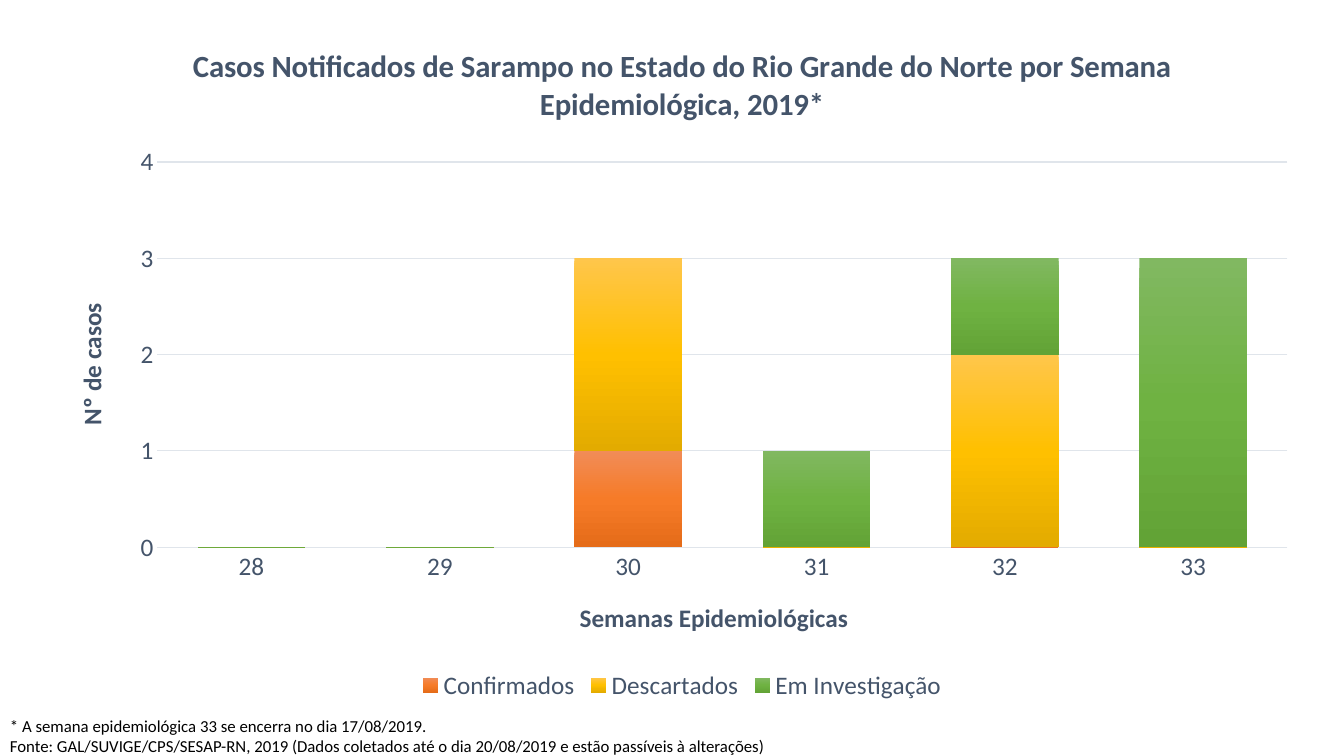
from copy import deepcopy

from pptx import Presentation
from pptx.chart.data import CategoryChartData
from pptx.dml.color import RGBColor
from pptx.enum.chart import XL_CHART_TYPE, XL_LEGEND_POSITION, XL_TICK_MARK
from pptx.enum.text import MSO_AUTO_SIZE
from pptx.oxml import parse_xml
from pptx.oxml.ns import nsdecls
from pptx.util import Inches, Pt

FACE = "Calibri"
SLATE = "44546A"
PALE = "E0E5EB"
WEEKS = ["28", "29", "30", "31", "32", "33"]
CASES = [
    ("Confirmados", [0, 0, 1, 0, 0, 0], ["F18C57", "F67B28", "E56C19"]),
    ("Descartados", [0, 0, 2, 0, 2, 0], ["FFC64B", "FFC000", "E3AB00"]),
    ("Em Investigação", [0, 0, 0, 1, 1, 3], ["81B861", "6FB242", "62A336"]),
]
NOTES = [
    "* A semana epidemiológica 33 se encerra no dia 17/08/2019.",
    "Fonte: GAL/SUVIGE/CPS/SESAP-RN, 2019 (Dados coletados até o dia "
    "20/08/2019 e estão passíveis à alterações)",
]


def color(code):
    return RGBColor.from_string(code)


def style(font, size, code, bold=False):
    font.name = FACE
    font.size = Pt(size)
    font.bold = bold
    font.color.rgb = color(code)


def set_title(owner, text, size):
    owner.has_title = True
    title = owner.chart_title if hasattr(owner, "chart_title") else owner.axis_title
    run = title.text_frame.paragraphs[0].add_run()
    run.text = text
    style(run.font, size, SLATE, True)


def set_line(line, code):
    line.color.rgb = color(code)
    line.width = Pt(0.75)


def set_axis(axis, text):
    set_title(axis, text, 18)
    style(axis.tick_labels.font, 18, SLATE)
    axis.major_tick_mark = XL_TICK_MARK.NONE
    axis.minor_tick_mark = XL_TICK_MARK.NONE


def shade(series, codes):
    fill = series.format.fill
    fill.gradient()
    fill.gradient_angle = 270
    stops = series._element.xpath(".//a:gsLst")[0]
    stops.append(deepcopy(stops[-1]))
    for i, (stop, code) in enumerate(zip(fill.gradient_stops, codes)):
        stop.position = i / 2
        stop.color.rgb = color(code)
    series.format.line.fill.background()
    series.invert_if_negative = False


def set_plot(chart, x, y, w, h):
    area = chart._chartSpace.chart.plotArea
    for old in area.xpath("c:layout"):
        area.remove(old)
    area.insert(0, parse_xml(
        f'<c:layout {nsdecls("c")}><c:manualLayout>'
        '<c:layoutTarget val="inner"/><c:xMode val="edge"/><c:yMode val="edge"/>'
        f'<c:x val="{x}"/><c:y val="{y}"/><c:w val="{w}"/><c:h val="{h}"/>'
        '</c:manualLayout></c:layout>'))


def add_graph(slide):
    data = CategoryChartData()
    data.categories = WEEKS
    for name, counts, _ in CASES:
        data.add_series(name, counts)
    chart = slide.shapes.add_chart(
        XL_CHART_TYPE.COLUMN_STACKED, Inches(0.51), Inches(0.2),
        Inches(12.51), Inches(6.8), data).chart
    style(chart.font, 18, SLATE)
    set_title(chart, "Casos Notificados de Sarampo no Estado do Rio Grande do Norte "
              "por Semana Epidemiológica, 2019*", 22)
    chart.chart_title.include_in_layout = False
    chart.has_legend = True
    chart.legend.position = XL_LEGEND_POSITION.BOTTOM
    chart.legend.include_in_layout = False
    style(chart.legend.font, 18, SLATE)

    plot = chart.plots[0]
    plot.gap_width = 75
    plot.overlap = 100
    plot.vary_by_categories = False
    for series, (_, _, codes) in zip(plot.series, CASES):
        shade(series, codes)

    weeks, count = chart.category_axis, chart.value_axis
    set_axis(weeks, "Semanas Epidemiológicas")
    set_line(weeks.format.line, PALE)
    set_axis(count, "Nº de casos")
    count.format.line.fill.background()
    count.minimum_scale = 0
    count.maximum_scale = 4
    count.major_unit = 1
    count.has_major_gridlines = True
    set_line(count.major_gridlines.format.line, PALE)
    set_plot(chart, 0.084, 0.207, 0.896, 0.562)


def add_notes(slide):
    box = slide.shapes.add_textbox(Inches(0), Inches(7.05), Inches(7.79), Inches(0.5))
    frame = box.text_frame
    frame.word_wrap = False
    frame.auto_size = MSO_AUTO_SIZE.SHAPE_TO_FIT_TEXT
    for i, text in enumerate(NOTES):
        para = frame.add_paragraph() if i else frame.paragraphs[0]
        run = para.add_run()
        run.text = text
        style(run.font, 12, "000000")


def main():
    deck = Presentation()
    deck.slide_width = Inches(13.33)
    deck.slide_height = Inches(7.5)
    slide = deck.slides.add_slide(deck.slide_layouts[6])
    add_graph(slide)
    add_notes(slide)
    deck.save("out.pptx")


if __name__ == "__main__":
    main()
